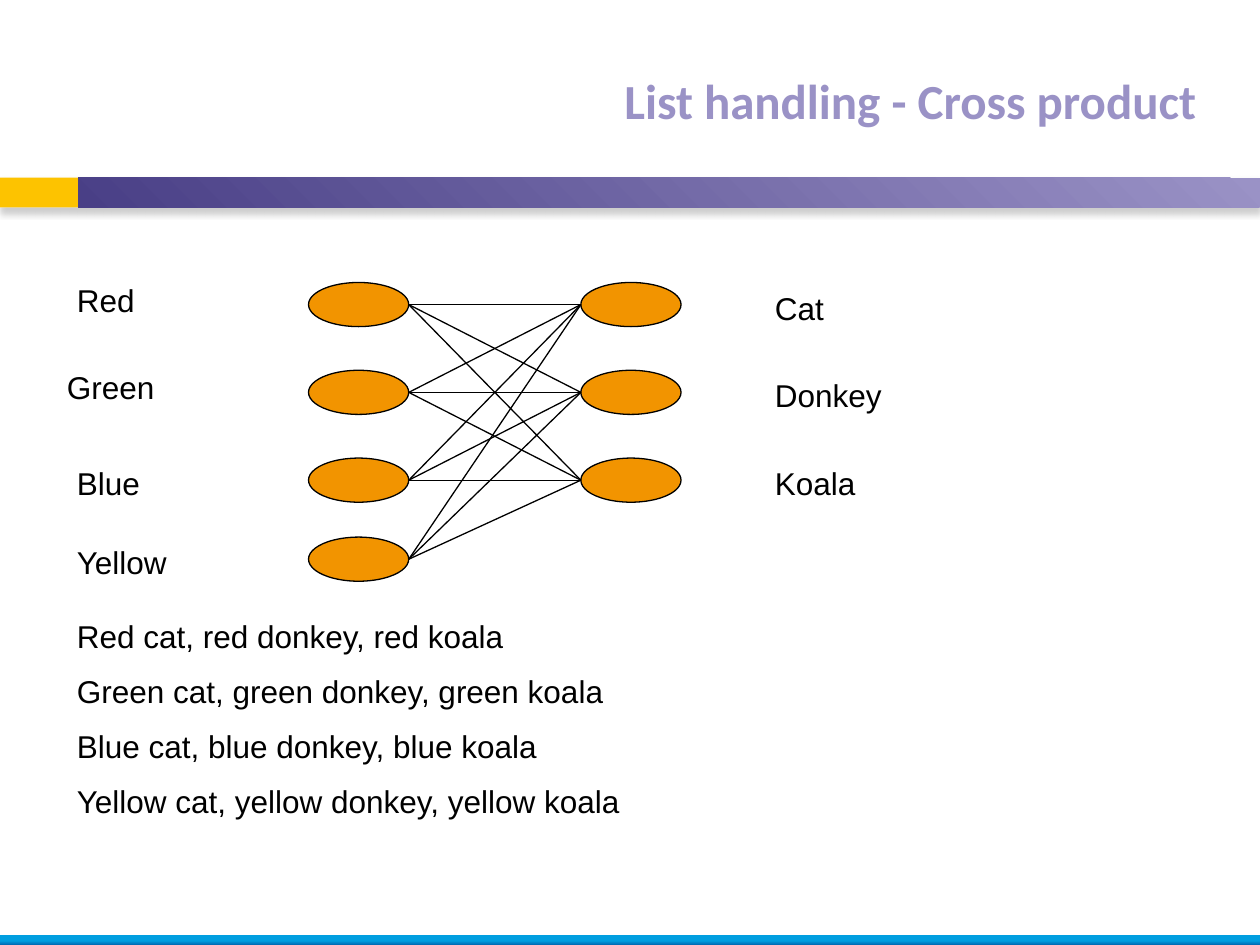
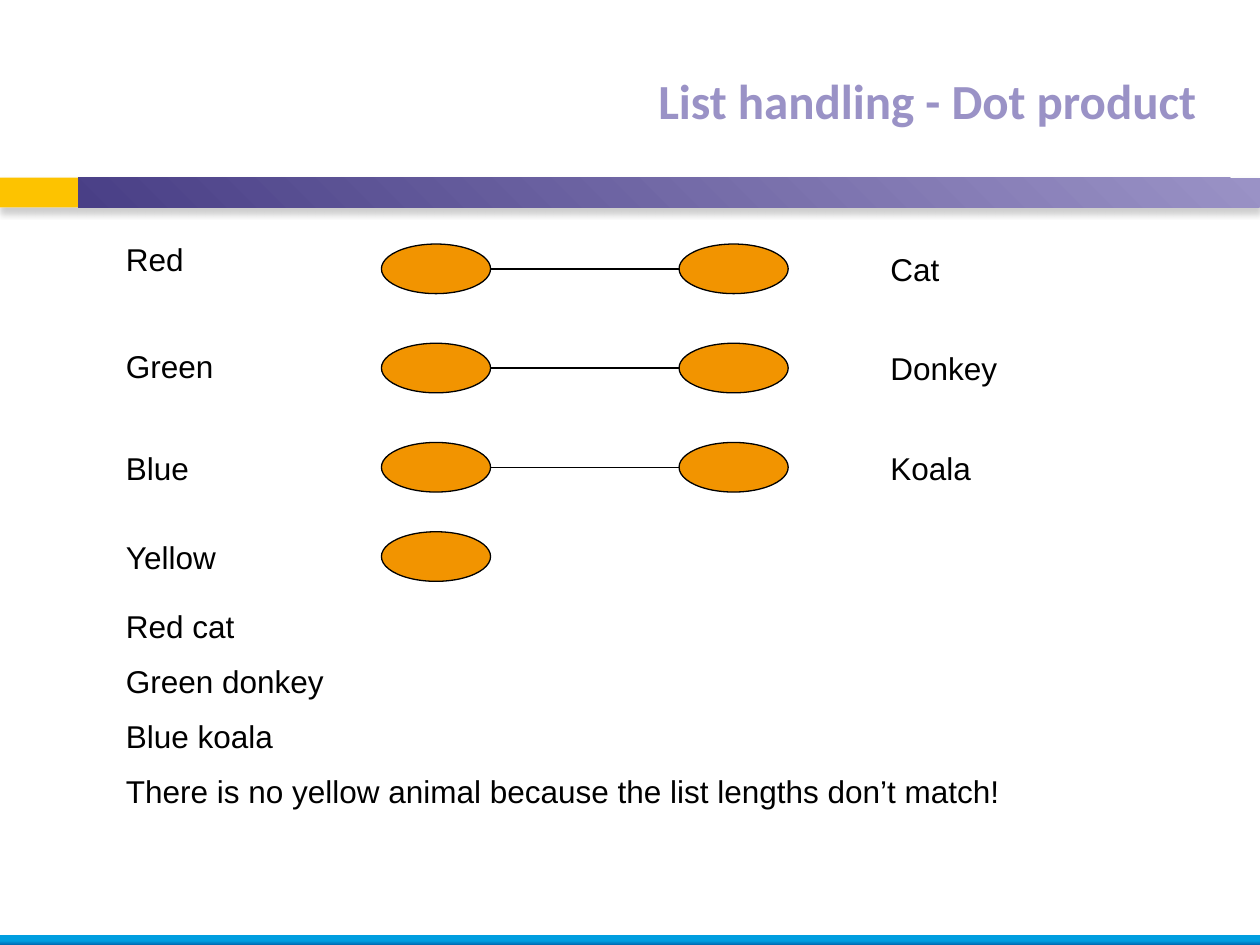
from itertools import product

from lxml.etree import SubElement
from pptx import Presentation
from pptx.dml.color import RGBColor
from pptx.enum.shapes import MSO_CONNECTOR, MSO_SHAPE
from pptx.enum.text import MSO_ANCHOR, MSO_AUTO_SIZE, PP_ALIGN
from pptx.oxml.ns import qn
from pptx.util import Cm, Pt

COLOURS = {
    "white": "FFFFFF",
    "black": "000000",
    "yellow": "FDC300",
    "lilac": "9A92C6",
    "violet": "493F86",
    "sky": "009EE0",
    "navy": "006AB2",
    "orange": "F29400",
    "shadow": "808080",
}
WIDTH, HEIGHT = 25.4, 19.05
BAND_TOP, BAND_HEIGHT = 3.58, 0.6
# The fourth row sits a little closer than the others.
ROW_STEPS = (0, 1, 2, 2.9)


def colour(name):
    return RGBColor.from_string(COLOURS[name])


class Painter:
    """Holds the deck, its style and the page being drawn; lengths are in cm."""

    def __init__(self):
        self.deck = Presentation()
        self.deck.slide_width, self.deck.slide_height = Cm(WIDTH), Cm(HEIGHT)
        self.page = None

    def start_page(self, title):
        self.page = self.deck.slides.add_slide(self.deck.slide_layouts[6])
        backing = self.add_figure(0, BAND_TOP, WIDTH, BAND_HEIGHT, fill="white")
        self.cast_shadow(backing)
        self.add_figure(0, BAND_TOP, 1.78, BAND_HEIGHT, fill="yellow")
        band = self.add_figure(1.58, BAND_TOP, WIDTH - 1.58, BAND_HEIGHT)
        self.blend(band, (("lilac", 0), ("violet", 1)), angle=225)
        footer = self.add_figure(0, 18.85, WIDTH, 0.2)
        self.blend(footer, (("sky", 0.6), ("navy", 1)), angle=270)
        self.add_text(title, 1.7, 0.64, 22.66, 2.74, font="Calibri", size=28,
                      ink="lilac", bold=True, align=PP_ALIGN.RIGHT,
                      anchor=MSO_ANCHOR.MIDDLE, grow=False)

    def add_figure(self, left, top, width, height, kind=MSO_SHAPE.RECTANGLE,
                   fill=None, line=None):
        shape = self.page.shapes.add_shape(
            kind, Cm(left), Cm(top), Cm(width), Cm(height))
        shape.shadow.inherit = False
        if fill:
            shape.fill.solid()
            shape.fill.fore_color.rgb = colour(fill)
        if line:
            shape.line.color.rgb = colour(line)
            shape.line.width = Pt(0.75)
        else:
            shape.line.fill.background()
        return shape

    def blend(self, shape, stops, angle):
        """Fill a shape with a two-colour gradient."""
        shape.fill.gradient()
        shape.fill.gradient_angle = angle
        for stop, (name, position) in zip(shape.fill.gradient_stops, stops):
            stop.color.rgb = colour(name)
            stop.position = position

    def cast_shadow(self, shape):
        effects = shape.element.spPr.find(qn("a:effectLst"))
        shadow = SubElement(effects, qn("a:outerShdw"), blurRad=str(Pt(4)),
                            dist=str(Pt(3)), dir="5400000", rotWithShape="0")
        tint = SubElement(shadow, qn("a:srgbClr"), val=COLOURS["shadow"])
        SubElement(tint, qn("a:alpha"), val="40000")

    def add_link(self, start, end):
        link = self.page.shapes.add_connector(
            MSO_CONNECTOR.STRAIGHT, *(Cm(value) for value in start + end))
        link.line.color.rgb = colour("black")
        link.line.width = Pt(0.75)
        SubElement(link.element.spPr, qn("a:effectLst"))

    def add_text(self, text, left, top, width, height, font="Arial", size=18,
                 ink="black", bold=False, align=PP_ALIGN.LEFT,
                 anchor=MSO_ANCHOR.TOP, grow=True):
        """Add a text box with one paragraph for each line of text."""
        box = self.page.shapes.add_textbox(
            Cm(left), Cm(top), Cm(width), Cm(height))
        frame = box.text_frame
        frame.word_wrap = True
        frame.vertical_anchor = anchor
        frame.auto_size = (MSO_AUTO_SIZE.SHAPE_TO_FIT_TEXT if grow
                           else MSO_AUTO_SIZE.NONE)
        frame.text = text
        for index, para in enumerate(frame.paragraphs):
            para.alignment = align
            if index:
                para.space_before = Pt(9.8)
            para.font.name = font
            para.font.size = Pt(size)
            para.font.bold = bold
            para.font.color.rgb = colour(ink)

    def add_mapping(self, colours, animals, pairs, columns, label_columns,
                    first_centre, pitch, oval_size, label_size):
        """Draw two columns of labelled ovals and the links between them.

        Each colour is its label and the label's shift right and down.
        """
        oval_width, oval_height = oval_size
        centres = [first_centre + step * pitch for step in ROW_STEPS]
        tops = [centre - oval_height / 2 for centre in centres]
        for left, entries in zip(columns, (colours, animals)):
            for top, _ in zip(tops, entries):
                self.add_figure(left, top, oval_width, oval_height,
                                MSO_SHAPE.OVAL, "orange", "black")
        for source, target in pairs:
            self.add_link((columns[0] + oval_width, centres[source]),
                          (columns[1], centres[target]))
        for top, (name, right, down) in zip(tops, colours):
            self.add_text(name, label_columns[0] + right, top + down,
                          *label_size)
        for top, name in zip(tops, animals):
            self.add_text(name, label_columns[1], top, *label_size)


def main():
    painter = Painter()
    animals = ("Cat", "Donkey", "Koala")

    painter.start_page("List handling - Cross product")
    painter.add_mapping(
        (("Red", 0, -0.15), ("Green", -0.2, -0.18),
         ("Blue", 0, 0), ("Yellow", 0, 0)),
        animals, product(range(4), range(3)),
        columns=(6.22, 11.71), label_columns=(1.3, 15.37),
        first_centre=6.14, pitch=1.77,
        oval_size=(2.02, 0.89), label_size=(2.92, 0.91))
    painter.add_text("Red cat, red donkey, red koala\n"
                     "Green cat, green donkey, green koala\n"
                     "Blue cat, blue donkey, blue koala\n"
                     "Yellow cat, yellow donkey, yellow koala",
                     1.3, 12.32, 19.4, 4.47)

    painter.start_page("List handling - Dot product")
    painter.add_mapping(
        (("Red", 0, -0.2), ("Green", 0, -0.04),
         ("Blue", 0, 0), ("Yellow", 0, 0)),
        animals, zip(range(3), range(3)),
        columns=(7.69, 13.69), label_columns=(2.29, 17.7),
        first_centre=5.42, pitch=2,
        oval_size=(2.2, 1), label_size=(3.2, 1.02))
    painter.add_text("Red cat\n"
                     "Green donkey\n"
                     "Blue koala\n"
                     "There is no yellow animal because the list lengths "
                     "don’t match!",
                     2.29, 12.12, 21, 4.47)

    painter.deck.save("out.pptx")


if __name__ == "__main__":
    main()
